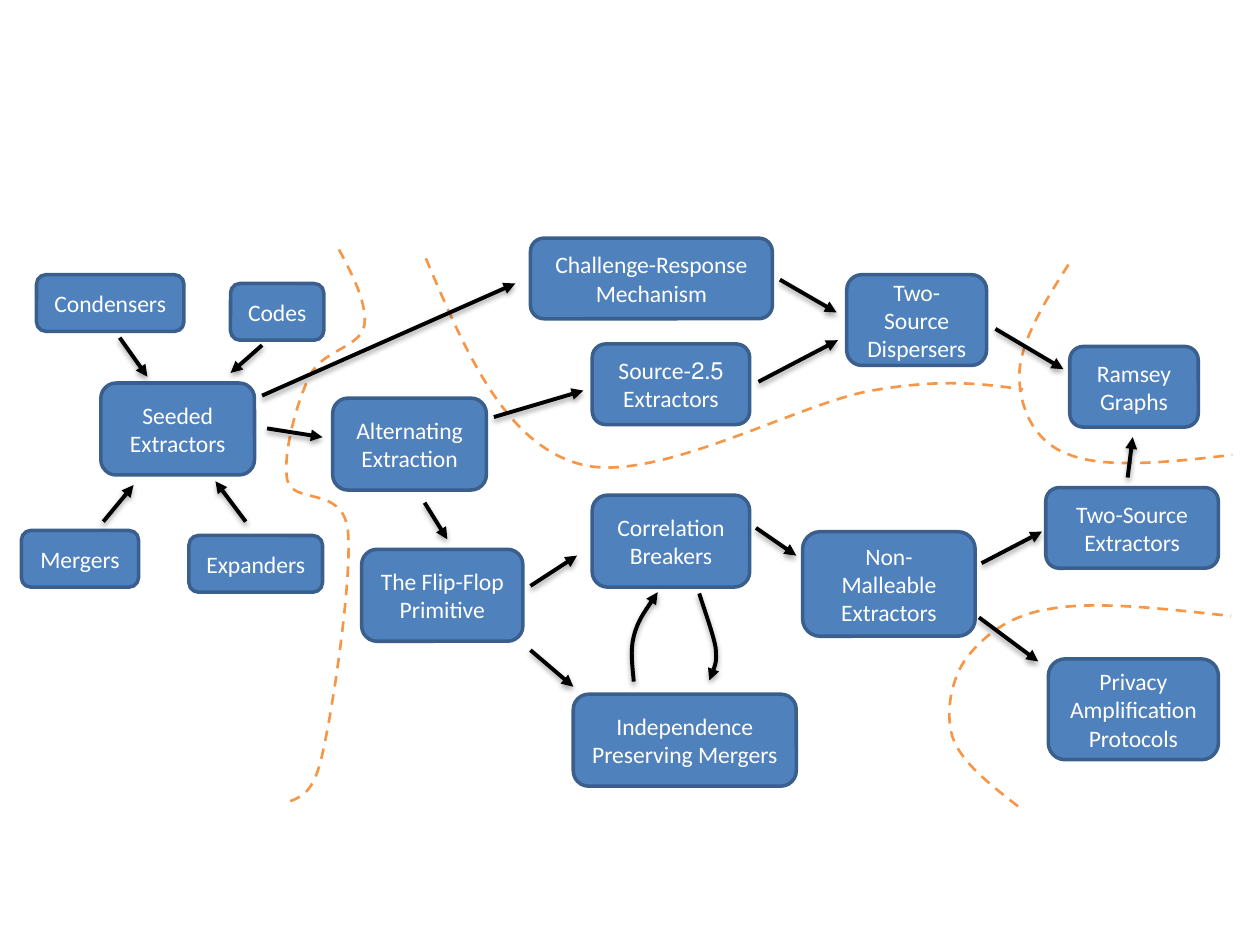
from dataclasses import dataclass
from typing import NamedTuple

from lxml.etree import SubElement
from pptx import Presentation
from pptx.dml.color import RGBColor
from pptx.enum.dml import MSO_LINE
from pptx.enum.shapes import MSO_CONNECTOR, MSO_SHAPE
from pptx.enum.text import MSO_ANCHOR, PP_ALIGN
from pptx.oxml.ns import qn
from pptx.util import Inches, Pt


@dataclass(frozen=True)
class Theme:
    fill: RGBColor = RGBColor(0x4F, 0x81, 0xBD)
    edge: RGBColor = RGBColor(0x3A, 0x5F, 0x8C)
    text: RGBColor = RGBColor(0xFF, 0xFF, 0xFF)
    arrow: RGBColor = RGBColor(0, 0, 0)
    border: RGBColor = RGBColor(0xF7, 0x96, 0x46)
    font: str = "Calibri"
    size: float = 13.5
    edge_width: float = 2
    arrow_width: float = 2.25
    border_width: float = 1.5


class Topic(NamedTuple):
    text: str
    left: float
    top: float
    width: float
    height: float


class Arrow(NamedTuple):
    x1: float
    y1: float
    x2: float
    y2: float


Points = list[tuple[float, float]]
THEME = Theme()
LOW, MID, HIGH = 0.45, 0.64, 0.73

TOPICS = [
    Topic("Condensers", 0.29, 2.18, 1.17, LOW),
    Topic("Codes", 1.83, 2.25, 0.74, LOW),
    Topic("Seeded Extractors", 0.8, 3.04, 1.22, HIGH),
    Topic("Mergers", 0.17, 4.21, 0.93, LOW),
    Topic("Expanders", 1.5, 4.25, 1.06, LOW),
    Topic("Alternating Extraction", 2.64, 3.16, 1.22, HIGH),
    Topic("The Flip-Flop Primitive", 2.87, 4.36, 1.28, HIGH),
    Topic("Challenge-Response Mechanism", 4.21, 1.89, 1.92, MID),
    Topic("2.5-Source Extractors", 4.7, 2.73, 1.25, MID),
    Topic("Correlation Breakers", 4.7, 3.93, 1.25, HIGH),
    Topic("Independence Preserving Mergers", 4.55, 5.51, 1.77, HIGH),
    Topic("Two-Source Dispersers", 6.72, 2.18, 1.11, 0.72),
    Topic("Non-Malleable Extractors", 6.37, 4.22, 1.37, 0.83),
    Topic("Ramsey Graphs", 8.49, 2.75, 1.02, MID),
    Topic("Two-Source Extractors", 8.3, 3.87, 1.37, MID),
    Topic("Privacy Amplification Protocols", 8.32, 5.23, 1.35, 0.8),
]

ARROWS = [
    Arrow(0.95, 2.68, 1.17, 2.99),
    Arrow(2.08, 2.74, 1.83, 2.96),
    Arrow(0.82, 4.14, 1.06, 3.85),
    Arrow(1.95, 4.14, 1.71, 3.82),
    Arrow(2.12, 3.4, 2.56, 3.47),
    Arrow(2.08, 3.14, 4.09, 2.25),
    Arrow(3.37, 3.99, 3.55, 4.28),
    Arrow(3.92, 3.31, 4.63, 3.1),
    Arrow(4.21, 4.65, 4.58, 4.41),
    Arrow(4.21, 5.16, 4.55, 5.45),
    Arrow(6, 4.19, 6.32, 4.41),
    Arrow(6.19, 2.22, 6.64, 2.48),
    Arrow(6.02, 3.03, 6.65, 2.7),
    Arrow(7.9, 2.61, 8.44, 2.93),
    Arrow(7.79, 4.47, 8.27, 4.22),
    Arrow(7.77, 4.9, 8.24, 5.25),
    Arrow(8.95, 3.79, 8.99, 3.47),
]

# Each curve is a start point, then two control points and an end per arc.
LOOPS: list[Points] = [
    [(5.03, 5.41), (5.02, 5.29), (5, 5.16), (5.03, 5.05),
     (5.06, 4.93), (5.14, 4.82), (5.22, 4.7)],
    [(5.55, 4.71), (5.6, 4.87), (5.66, 5.03), (5.68, 5.14),
     (5.69, 5.26), (5.66, 5.33), (5.63, 5.4)],
]
BORDERS: list[Points] = [
    [(2.69, 1.98), (2.81, 2.2), (2.92, 2.43), (2.89, 2.59),
     (2.85, 2.76), (2.56, 2.78), (2.46, 2.98),
     (2.36, 3.18), (2.24, 3.6), (2.28, 3.81),
     (2.33, 4.01), (2.71, 3.85), (2.76, 4.2),
     (2.8, 4.55), (2.65, 5.57), (2.57, 5.93),
     (2.5, 6.29), (2.4, 6.32), (2.3, 6.36)],
    [(3.38, 2.05), (3.69, 2.78), (4, 3.51), (4.59, 3.68),
     (5.18, 3.86), (6.33, 3.2), (6.92, 3.1),
     (7.5, 3), (7.81, 3.05), (8.12, 3.09)],
    [(8.48, 2.1), (8.28, 2.41), (8.09, 2.73), (8.09, 2.98),
     (8.09, 3.23), (8.2, 3.51), (8.49, 3.61),
     (8.77, 3.72), (9.28, 3.67), (9.78, 3.61)],
    [(8.08, 6.4), (7.85, 6.22), (7.63, 6.05), (7.56, 5.85),
     (7.5, 5.65), (7.55, 5.38), (7.68, 5.21),
     (7.82, 5.04), (8.01, 4.88), (8.35, 4.83),
     (8.7, 4.77), (9.23, 4.83), (9.77, 4.89)],
]


def add_topic(slide, topic: Topic) -> None:
    box = slide.shapes.add_shape(
        MSO_SHAPE.ROUNDED_RECTANGLE, *(Inches(n) for n in topic[1:]))
    box.shadow.inherit = False
    box.fill.solid()
    box.fill.fore_color.rgb = THEME.fill
    box.line.color.rgb = THEME.edge
    box.line.width = Pt(THEME.edge_width)
    frame = box.text_frame
    frame.word_wrap = True
    frame.vertical_anchor = MSO_ANCHOR.MIDDLE
    frame.text = topic.text
    para = frame.paragraphs[0]
    para.alignment = PP_ALIGN.CENTER
    para._p.get_or_add_pPr().set("rtl", "1")
    para.font.name = THEME.font
    para.font.size = Pt(THEME.size)
    para.font.color.rgb = THEME.text


def style_arrow(shape) -> None:
    """Give a line its weight, arrowhead and soft shadow."""
    shape.line.color.rgb = THEME.arrow
    shape.line.width = Pt(THEME.arrow_width)
    SubElement(shape.line._get_or_add_ln(), qn("a:tailEnd"), type="triangle")
    props = shape._element.spPr
    effects = props.find(qn("a:effectLst"))
    if effects is None:
        effects = SubElement(props, qn("a:effectLst"))
    shadow = SubElement(
        effects, qn("a:outerShdw"), blurRad=str(Pt(3.1)), dist=str(Pt(1.8)),
        dir="5400000", rotWithShape="0")
    color = SubElement(shadow, qn("a:srgbClr"), val="000000")
    SubElement(color, qn("a:alpha"), val="35000")


def add_arrow(slide, arrow: Arrow) -> None:
    style_arrow(slide.shapes.add_connector(
        MSO_CONNECTOR.STRAIGHT, *(Inches(n) for n in arrow)))


def add_curve(slide, points: Points):
    """Build a freeform, then turn every three segments into one arc."""
    start, *rest = [(Inches(x), Inches(y)) for x, y in points]
    pen = slide.shapes.build_freeform(*start)
    pen.add_line_segments(rest, close=False)
    curve = pen.convert_to_shape()
    lines = curve._element.xpath(".//a:lnTo")
    track = lines[0].getparent()
    for first in range(0, len(lines), 3):
        arc = SubElement(track, qn("a:cubicBezTo"))
        for line in lines[first:first + 3]:
            arc.append(line[0])
            track.remove(line)
    curve.fill.background()
    curve.shadow.inherit = False
    return curve


def add_border(slide, points: Points) -> None:
    line = add_curve(slide, points).line
    line.color.rgb = THEME.border
    line.width = Pt(THEME.border_width)
    line.dash_style = MSO_LINE.DASH


def main() -> None:
    deck = Presentation()
    deck.slide_width, deck.slide_height = Inches(10), Inches(7.5)
    slide = deck.slides.add_slide(deck.slide_layouts[6])
    for topic in TOPICS:
        add_topic(slide, topic)
    for points in BORDERS:
        add_border(slide, points)
    for arrow in ARROWS:
        add_arrow(slide, arrow)
    for points in LOOPS:
        style_arrow(add_curve(slide, points))
    deck.save("out.pptx")


if __name__ == "__main__":
    main()
